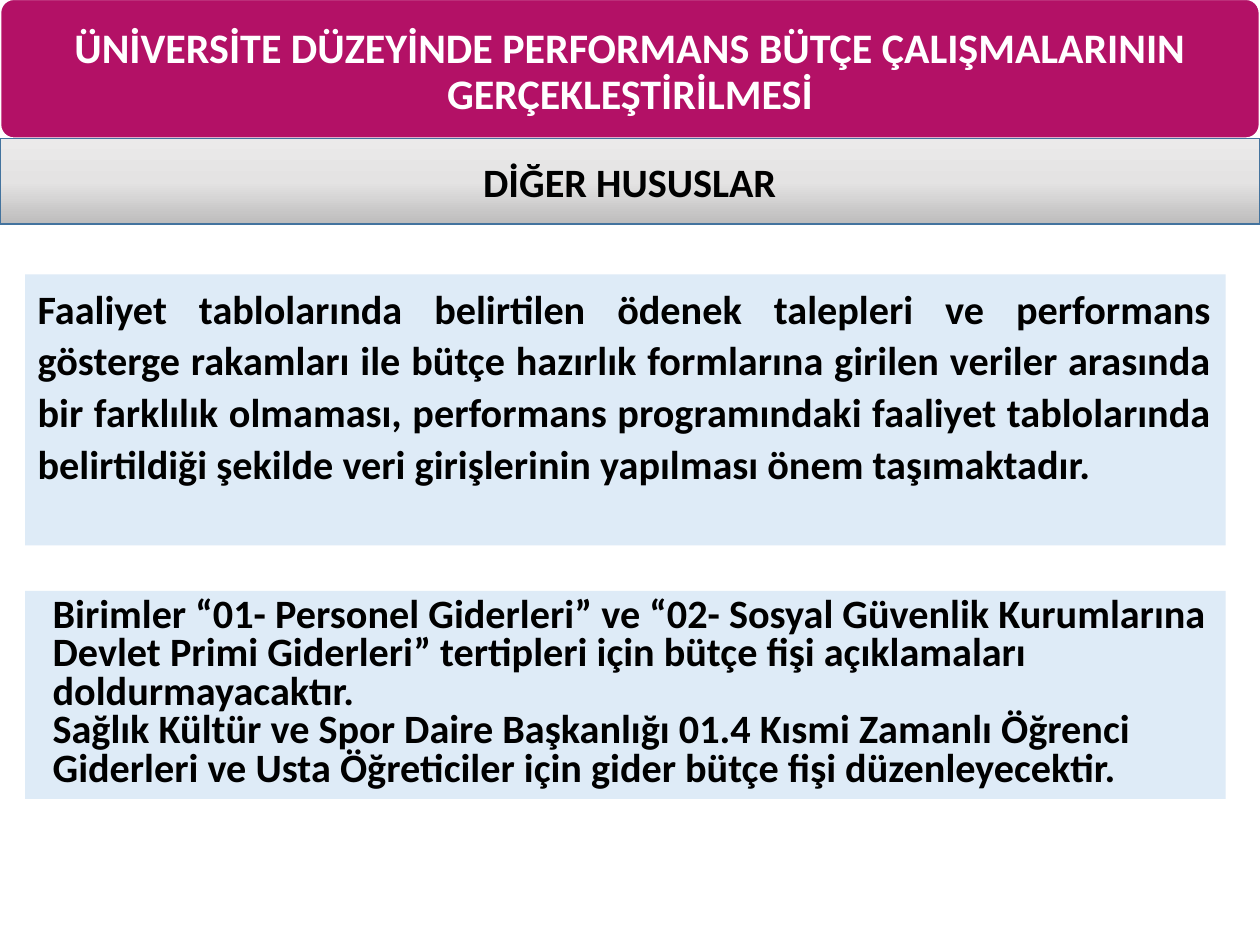
from copy import deepcopy

from pptx import Presentation
from pptx.dml.color import RGBColor
from pptx.enum import shapes, text
from pptx.oxml import ns
from pptx.util import Pt

MAGENTA = RGBColor(0xB3, 0x11, 0x66)
WHITE = RGBColor(0xFF, 0xFF, 0xFF)
BLACK = RGBColor(0, 0, 0)
PALE_BLUE = RGBColor(0xDE, 0xEB, 0xF7)
STEEL_BLUE = RGBColor(0x43, 0x73, 0x9E)
GREYS = [
    (0, RGBColor(0xEB, 0xEA, 0xEA)),
    (0.5, RGBColor(0xE4, 0xE3, 0xE3)),
    (1, RGBColor(0xBD, 0xBC, 0xBC)),
]

HEADING = "ÜNİVERSİTE DÜZEYİNDE PERFORMANS BÜTÇE ÇALIŞMALARININ GERÇEKLEŞTİRİLMESİ"
SECTION = "DİĞER HUSUSLAR"
CONSISTENCY = [
    "Faaliyet tablolarında belirtilen ödenek talepleri ve performans gösterge "
    "rakamları ile bütçe hazırlık formlarına girilen veriler arasında bir "
    "farklılık olmaması, performans programındaki faaliyet tablolarında "
    "belirtildiği şekilde veri girişlerinin yapılması önem taşımaktadır."
]
EXEMPTIONS = [
    "Birimler “01- Personel Giderleri” ve “02- Sosyal Güvenlik Kurumlarına",
    "Devlet Primi Giderleri” tertipleri için bütçe fişi açıklamaları",
    "doldurmayacaktır.",
    "Sağlık Kültür ve Spor Daire Başkanlığı 01.4 Kısmi Zamanlı Öğrenci",
    "Giderleri ve Usta Öğreticiler için gider bütçe fişi düzenleyecektir.",
]


def add_panel(slide, kind, left, top, width, height):
    panel = slide.shapes.add_shape(kind, Pt(left), Pt(top), Pt(width), Pt(height))
    panel.shadow.inherit = False
    return panel


def write(frame, lines, size, color, align, spacing, anchor):
    frame.word_wrap = True
    frame.auto_size = text.MSO_AUTO_SIZE.NONE
    frame.vertical_anchor = anchor
    frame.text = "\n".join(lines)
    for paragraph in frame.paragraphs:
        paragraph.alignment = align
        paragraph.line_spacing = spacing
        font = paragraph.font
        font.name, font.size, font.bold = "Calibri", Pt(size), True
        font.color.rgb = color


def add_banner(slide):
    banner = add_panel(slide, shapes.MSO_SHAPE.ROUNDED_RECTANGLE, 0, -0.7, 720, 80)
    banner.adjustments[0] = 0.1
    banner.fill.solid()
    banner.fill.fore_color.rgb = MAGENTA
    banner.line.color.rgb = WHITE
    banner.line.width = Pt(1.5)


def add_section_bar(slide):
    bar = add_panel(slide, shapes.MSO_SHAPE.RECTANGLE, 0, 79.2, 720, 49)
    bar.fill.gradient()
    bar.fill.gradient_angle = 270
    stops = bar._element.find(".//" + ns.qn("a:gsLst"))
    stops.append(deepcopy(stops[-1]))
    for stop, (position, grey) in zip(bar.fill.gradient_stops, GREYS):
        stop.position = position
        stop.color.rgb = grey
    bar.line.color.rgb = STEEL_BLUE
    bar.line.width = Pt(1)
    write(bar.text_frame, [SECTION], 23, BLACK,
          text.PP_ALIGN.CENTER, 1.0, text.MSO_ANCHOR.MIDDLE)


def add_note(slide, top, height, lines, spacing, margin=0, indent=0):
    note = add_panel(slide, shapes.MSO_SHAPE.RECTANGLE, 14.4, top, 686, height)
    note.fill.solid()
    note.fill.fore_color.rgb = PALE_BLUE
    note.line.fill.background()
    write(note.text_frame, lines, 23, BLACK,
          text.PP_ALIGN.JUSTIFY, spacing, text.MSO_ANCHOR.TOP)
    for paragraph in note.text_frame.paragraphs:
        properties = paragraph._p.get_or_add_pPr()
        properties.set("marL", str(Pt(margin)))
        properties.set("indent", str(Pt(indent)))


def place_title(slide):
    title = slide.shapes.title
    title.left, title.top, title.width, title.height = Pt(3.6), Pt(12.2), Pt(712.8), Pt(60)
    write(title.text_frame, [HEADING], 24, WHITE,
          text.PP_ALIGN.CENTER, 0.9, text.MSO_ANCHOR.TOP)
    slide.shapes._spTree.append(title._element)


def main():
    deck = Presentation()
    deck.slide_width, deck.slide_height = Pt(720), Pt(540)
    slide = deck.slides.add_slide(deck.slide_layouts.get_by_name("Title Only"))
    add_banner(slide)
    add_section_bar(slide)
    add_note(slide, 156.8, 154.8, CONSISTENCY, 1.07)
    add_note(slide, 337.7, 118.8, EXEMPTIONS, 0.8, margin=28.8, indent=-20.2)
    place_title(slide)
    deck.save("out.pptx")


if __name__ == "__main__":
    main()
